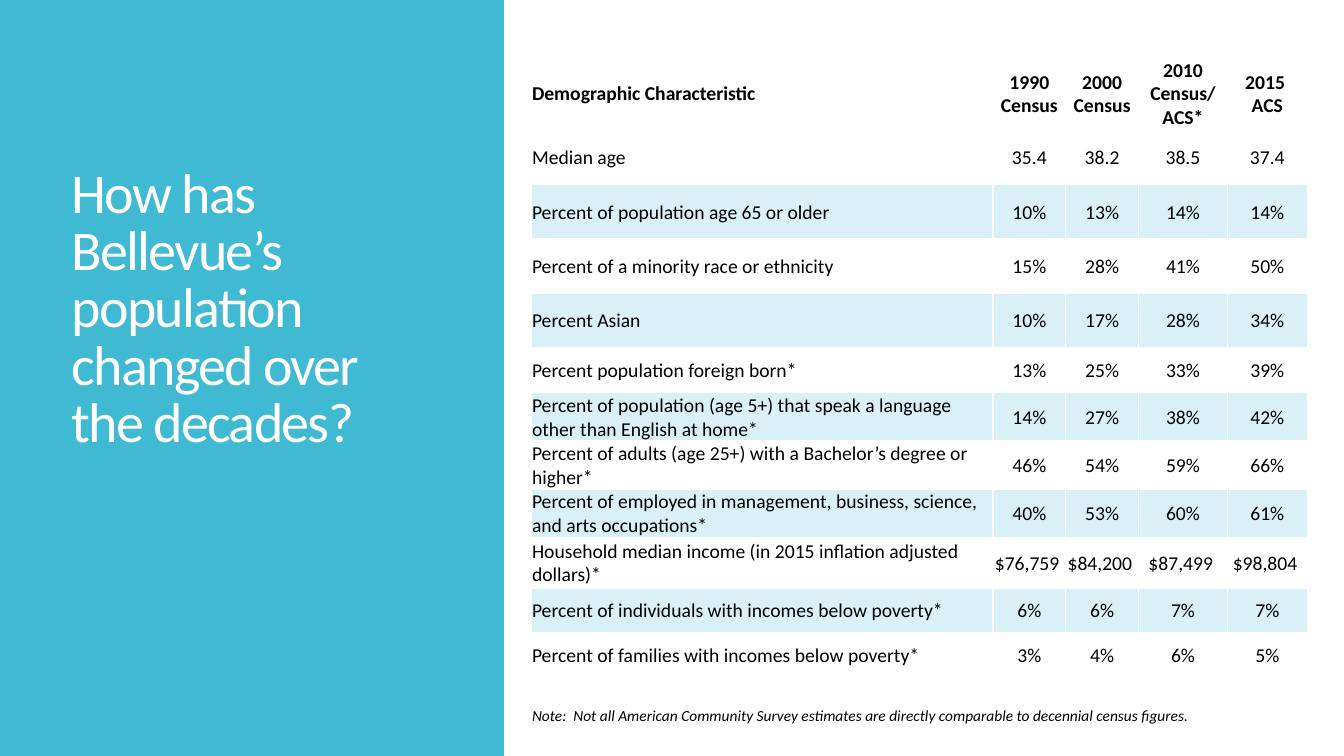
from lxml import etree
from pptx import Presentation
from pptx import util as u
from pptx.dml.color import RGBColor
from pptx.enum import shapes, text
from pptx.oxml.ns import qn

COLORS = {"panel": "40BAD2", "band": "D9F1F6", "white": "FFFFFF", "black": "000000"}
TITLE = {"size": u.Pt(40), "name": "Calibri"}
BODY = {"size": u.Pt(14), "name": "Calibri", "bold": False}
HEAD = {**BODY, "bold": True}
NOTE = {**BODY, "size": u.Pt(11), "italic": True}
MARGINS = {"margin_left": 0.72, "margin_right": 0.72, "margin_top": 0.72, "margin_bottom": 0}
WIDTHS = [330, 52, 52, 63.5, 57]
HEIGHTS = [52] + [38.9] * 4 + [32] + [34.5] * 3 + [36, 32, 32, 34.5]
ROWS = [
    ["Demographic Characteristic", "1990\nCensus", "2000\nCensus", "2010 Census/\nACS*", "2015 \nACS"],
    ["Median age", "35.4", "38.2", "38.5", "37.4"],
    ["Percent of population age 65 or older", "10%", "13%", "14%", "14%"],
    ["Percent of a minority race or ethnicity", "15%", "28%", "41%", "50%"],
    ["Percent Asian", "10%", "17%", "28%", "34%"],
    ["Percent population foreign born*", "13%", "25%", "33%", "39%"],
    ["Percent of population (age 5+) that speak a language other than English at home*",
     "14%", "27%", "38%", "42%"],
    ["Percent of adults (age 25+) with a Bachelor’s degree or higher*", "46%", "54%", "59%", "66%"],
    ["Percent of employed in management, business, science, and arts occupations*",
     "40%", "53%", "60%", "61%"],
    ["Household median income (in 2015 inflation adjusted dollars)*",
     "$76,759 ", "$84,200 ", "$87,499 ", "$98,804 "],
    ["Percent of individuals with incomes below poverty*", "6%", "6%", "7%", "7%"],
    ["Percent of families with incomes below poverty*", "3%", "4%", "6%", "5%"],
]
FOOTNOTE = ("Note:  Not all American Community Survey estimates are directly "
            "comparable to decennial census figures.")


def rgb(key):
    return RGBColor.from_string(COLORS[key])


def style(obj, values):
    for key, value in values.items():
        setattr(obj, key, value)


def write(tf, words, font, color, align):
    tf.text = words
    for p in tf.paragraphs:
        p.alignment = align
        for r in p.runs:
            style(r.font, font)
            r.font.color.rgb = rgb(color)


def add_borders(cell):
    tcPr = cell._tc.get_or_add_tcPr()
    for i, side in enumerate(("a:lnL", "a:lnR", "a:lnT", "a:lnB")):
        ln = etree.Element(qn(side), w=str(u.Pt(1)))
        fill = etree.SubElement(ln, qn("a:solidFill"))
        etree.SubElement(fill, qn("a:srgbClr"), val=COLORS["white"])
        tcPr.insert(i, ln)


def title_panel(slide, x, y, w, h):
    sp = slide.shapes.add_shape(shapes.MSO_SHAPE.RECTANGLE, u.Pt(x), u.Pt(y), u.Pt(w), u.Pt(h))
    sp.shadow.inherit = False
    sp.fill.solid()
    sp.fill.fore_color.rgb = rgb("panel")
    sp.line.fill.background()
    box = slide.shapes.add_textbox(u.Pt(x + 44), u.Pt(y + 176.5), u.Pt(w - 93.5), u.Pt(151))
    tf = box.text_frame
    style(tf, {"word_wrap": True, "vertical_anchor": text.MSO_ANCHOR.BOTTOM})
    write(tf, "How has Bellevue’s population changed over the decades?", TITLE, "white",
          text.PP_ALIGN.LEFT)
    p = tf.paragraphs[0]
    p.line_spacing = 0.85
    p.runs[0].font._element.set("spc", "-120")


def census_table(slide, x, y, w, h):
    frame = slide.shapes.add_table(len(HEIGHTS), len(WIDTHS), u.Pt(x), u.Pt(y), u.Pt(w), u.Pt(h))
    table = frame.table
    style(table, {"first_row": False, "horz_banding": False})
    for column, width in zip(table.columns, WIDTHS):
        column.width = u.Pt(width)
    for row, height in zip(table.rows, HEIGHTS):
        row.height = u.Pt(height)
    last = len(ROWS)
    for i in range(last + 1):
        for j in range(len(WIDTHS)):
            cell = table.cell(i, j)
            style(cell, {key: u.Pt(value) for key, value in MARGINS.items()})
            cell.vertical_anchor = text.MSO_ANCHOR.MIDDLE
            if 0 < i < last and i % 2 == 0:
                cell.fill.solid()
                cell.fill.fore_color.rgb = rgb("band")
            else:
                cell.fill.background()
            add_borders(cell)
            if i < last:
                align = text.PP_ALIGN.CENTER if j else text.PP_ALIGN.LEFT
                write(cell.text_frame, ROWS[i][j], BODY if i else HEAD, "black", align)
    note = table.cell(last, 0)
    note.merge(table.cell(last, 3))
    note.vertical_anchor = text.MSO_ANCHOR.BOTTOM
    write(note.text_frame, FOOTNOTE, NOTE, "black", text.PP_ALIGN.LEFT)


def main():
    prs = Presentation()
    style(prs, {"slide_width": u.Pt(960), "slide_height": u.Pt(540)})
    slide = prs.slides.add_slide(prs.slide_layouts[6])
    title_panel(slide, 0, 0, 360, 540)
    census_table(slide, 379.3, 41, sum(WIDTHS), sum(HEIGHTS))
    prs.save("out.pptx")


if __name__ == "__main__":
    main()
